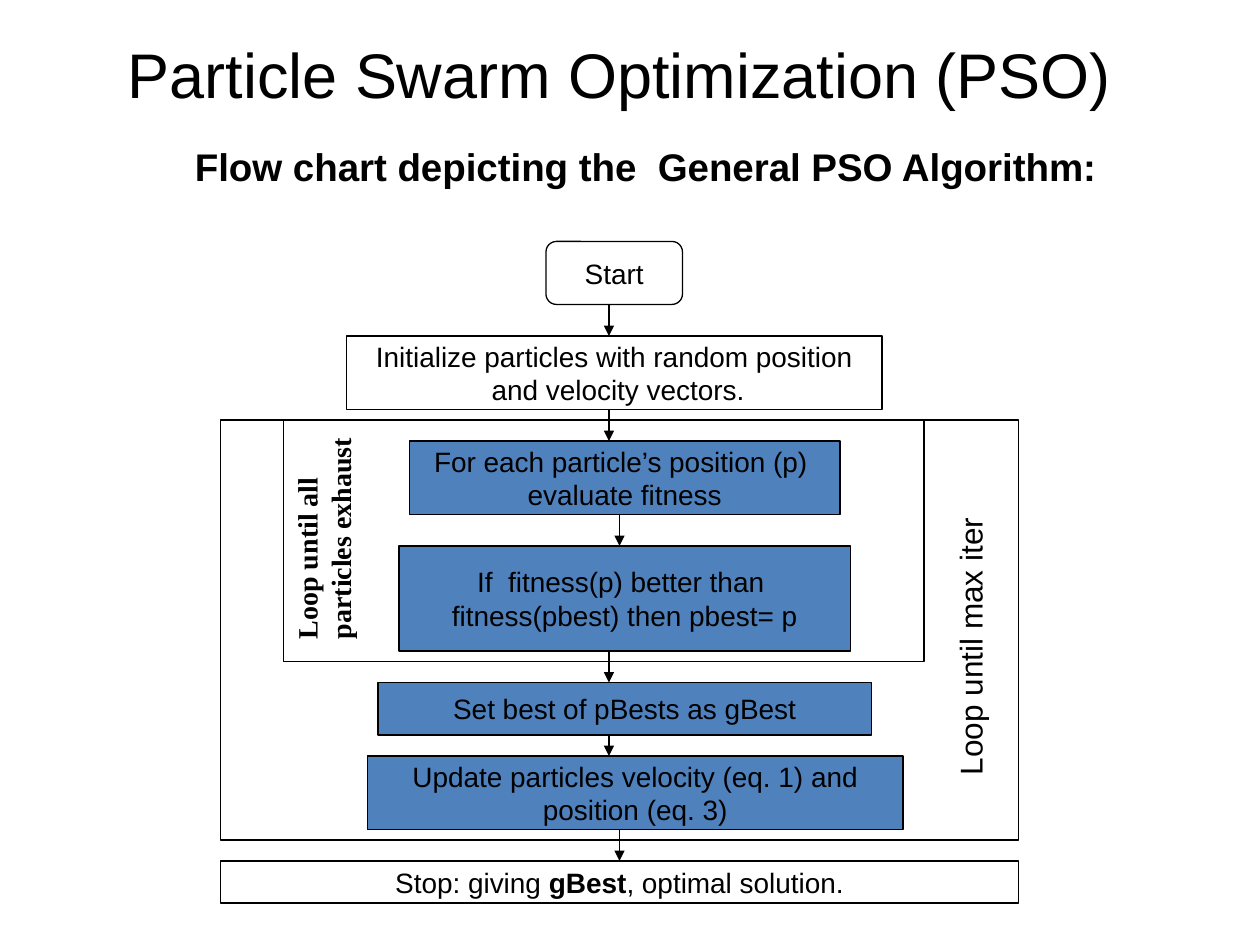
from lxml.etree import SubElement
from pptx import Presentation
from pptx.dml.color import RGBColor
from pptx.enum.shapes import MSO_CONNECTOR, MSO_SHAPE
from pptx.enum.text import MSO_ANCHOR, PP_ALIGN
from pptx.oxml.ns import qn
from pptx.util import Inches, Pt

COLORS = {"ink": "000000", "paper": "FFFFFF", "step": "4F81BD"}
COLUMNS_PER_INCH = 12
LINE_WIDTH = 0.75


def grid(*units):
    return [Inches(unit / COLUMNS_PER_INCH) for unit in units]


def color(name):
    return RGBColor.from_string(COLORS[name])


def write(frame, lines, size, font="Arial", bold=False, align=PP_ALIGN.CENTER):
    for index, line in enumerate(lines):
        para = frame.paragraphs[0] if index == 0 else frame.add_paragraph()
        para.alignment = align
        for words, strong in line if isinstance(line, list) else [(line, bold)]:
            span = para.add_run()
            span.text = words
            span.font.name = font
            span.font.size = Pt(size)
            span.font.bold = strong
            span.font.color.rgb = color("ink")


def add_label(page, area, words, size, anchor=MSO_ANCHOR.TOP, rotation=0, **style):
    box = page.shapes.add_textbox(*grid(*area))
    box.rotation = rotation
    box.text_frame.word_wrap = True
    box.text_frame.vertical_anchor = anchor
    write(box.text_frame, [words], size, **style)


def add_box(page, area, fill=None, lines=(), preset=MSO_SHAPE.RECTANGLE):
    box = page.shapes.add_shape(preset, *grid(*area))
    box.shadow.inherit = False
    if fill:
        box.fill.solid()
        box.fill.fore_color.rgb = color(fill)
    else:
        box.fill.background()
    box.line.color.rgb = color("ink")
    box.line.width = Pt(LINE_WIDTH)
    box.text_frame.word_wrap = False
    box.text_frame.vertical_anchor = MSO_ANCHOR.MIDDLE
    write(box.text_frame, lines, 16)


def add_arrow(page, column, top, bottom):
    arrow = page.shapes.add_connector(
        MSO_CONNECTOR.STRAIGHT, *grid(column, top, column, bottom)
    )
    arrow.line.color.rgb = color("ink")
    arrow.line.width = Pt(LINE_WIDTH)
    SubElement(arrow.line._get_or_add_ln(), qn("a:tailEnd"), type="triangle")
    SubElement(arrow._element.spPr, qn("a:effectLst"))


def add_flow(page):
    rectangle, rounded = MSO_SHAPE.RECTANGLE, MSO_SHAPE.ROUNDED_RECTANGLE
    steps = [
        ((52, 23, 13, 6), "paper", ["Start"], rounded, 58),
        ((33, 32, 51, 7), "paper",
         ["Initialize particles with random position", " and velocity vectors."],
         rectangle, 58),
        ((39, 42, 41, 7), "step",
         ["For each particle’s position (p) ", "evaluate fitness"], rectangle, 59),
        ((38, 52, 43, 10), "step",
         ["If  fitness(p) better than ", "fitness(pbest) then pbest= p"],
         rectangle, 58),
        ((36, 65, 47, 5), "step", ["Set best of pBests as gBest"], rectangle, 58),
        ((35, 72, 51, 7), "step",
         ["Update particles velocity (eq. 1) and", " position (eq. 3) "],
         rectangle, 59),
        ((21, 82, 76, 4), "paper",
         [[("Stop: giving ", False), ("gBest", True), (", optimal solution.", False)]],
         rectangle, None),
    ]
    for area, fill, lines, preset, _ in steps:
        add_box(page, area, fill, lines, preset)
    for step, following in zip(steps, steps[1:]):
        area, column = step[0], step[-1]
        add_arrow(page, column, area[1] + area[3], following[0][1])


def add_loops(page):
    add_box(page, (27, 40, 61, 23))
    add_box(page, (21, 40, 76, 40))
    add_label(page, (18.84, 46.2, 24, 7.68), "Loop until all particles exhaust", 16,
              rotation=270, font="Times New Roman", bold=True, align=PP_ALIGN.LEFT)
    add_label(page, (77.4, 57.6, 30, 4.8), "Loop until max iter", 18,
              rotation=270, align=PP_ALIGN.LEFT)


def main():
    deck = Presentation()
    deck.slide_width, deck.slide_height = grid(120, 90)
    page = deck.slides.add_slide(deck.slide_layouts[6])
    add_label(page, (10, 2, 98, 10), "Particle Swarm Optimization (PSO)", 36,
              anchor=MSO_ANCHOR.MIDDLE)
    add_label(page, (16, 13, 91, 5.6),
              "Flow chart depicting the  General PSO Algorithm:", 22, bold=True)
    add_flow(page)
    add_loops(page)
    deck.save("out.pptx")


if __name__ == "__main__":
    main()
